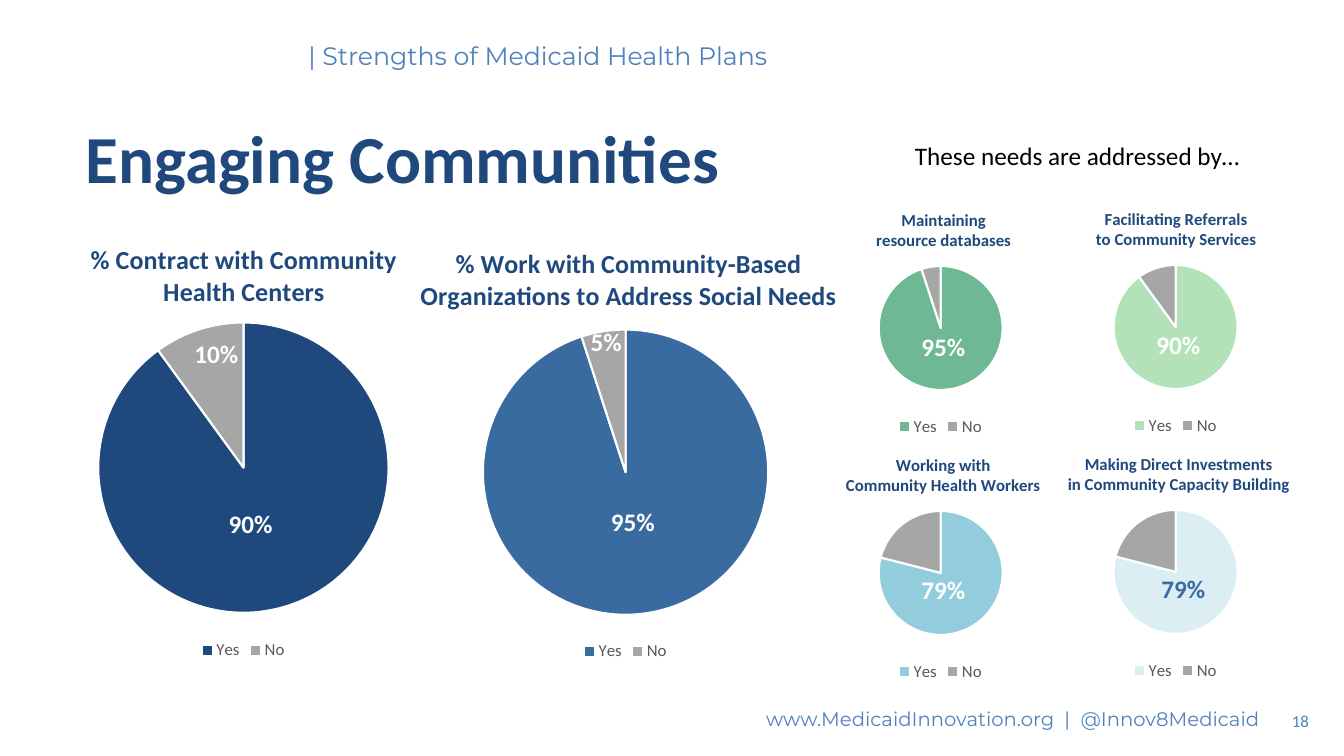
from dataclasses import dataclass

from pptx import Presentation, util as u
from pptx.chart.data import CategoryChartData
from pptx.dml.color import RGBColor
from pptx.enum import chart as ch, text as tx
from pptx.oxml import parse_xml
from pptx.oxml.ns import nsdecls, qn

NAVY, BLUE, SKY = "1F497D", "3A6BA0", "4F81BD"
GREY, WHITE, BLACK = "A6A6A6", "FFFFFF", "000000"


@dataclass
class Size:
    """Shared measures of a pie chart, in inches and points."""
    wide: float
    high: float
    font: float


@dataclass
class Pie:
    title: str
    yes: int
    fill: str
    left: float
    top: float
    size: Size
    head: tuple[float, float]  # title corner within the chart
    disc: tuple[float, float]  # disc top within the chart, diameter


@dataclass
class Label:
    words: str
    left: float
    top: float
    color: str = WHITE
    wide: float = 0.75


BIG = Size(5.67, 4.41, 18.6)
SMALL = Size(3.18, 2.47, 12)
DISC = (0.74, 1.23)
PIES = [
    Pie("% Contract with Community\nHealth Centers", 90, NAVY,
        -0.42, 2.18, BIG, (1.29, 0.19), (1.02, 2.88)),
    Pie("% Work with Community-Based\nOrganizations to Address Social Needs", 95, BLUE,
        3.37, 2.19, BIG, (0.77, 0.22), (1.08, 2.83)),
    Pie("Facilitating Referrals\nto Community Services", 90, "B4E2B8",
        10.07, 1.89, SMALL, (0.77, 0.14), DISC),
    Pie("Maintaining\nresource databases", 95, "6EB893",
        7.74, 1.9, SMALL, (0.92, 0.14), DISC),
    Pie("Making Direct Investments\nin Community Capacity Building", 79, "DBEEF4",
        10.07, 4.32, SMALL, (0.49, 0.14), DISC),
    Pie("Working with\nCommunity Health Workers", 79, "93CDDD",
        7.74, 4.33, SMALL, (0.62, 0.14), DISC),
]
LABELS = [
    Label("90%", 2.17, 4.99),
    Label("10%", 1.83, 3.31),
    Label("95%", 5.96, 4.97),
    Label("5%", 5.76, 3.19, wide=0.6),
    Label("95%", 9.04, 3.24),
    Label("90%", 11.37, 3.22),
    Label("79%", 9.04, 5.65),
    Label("79%", 11.42, 5.64, BLUE),
]


def rgb(color: str) -> RGBColor:
    return RGBColor.from_string(color)


def style(font, size: float, color: str, bold: bool = False,
          face: str = "Calibri") -> None:
    font.size, font.bold, font.name = u.Pt(size), bold, face
    font.color.rgb = rgb(color)


def write(slide, words: str, left: float, top: float, wide: float, high: float = 0.4, *,
          size: float = 18, color: str = WHITE, bold: bool = False,
          face: str = "Calibri", align=tx.PP_ALIGN.LEFT,
          anchor=tx.MSO_ANCHOR.TOP) -> None:
    box = slide.shapes.add_textbox(*map(u.Inches, (left, top, wide, high)))
    frame = box.text_frame
    frame.word_wrap, frame.vertical_anchor = True, anchor
    para = frame.paragraphs[0]
    para.alignment = align
    run = para.add_run()
    run.text = words
    style(run.font, size, color, bold, face)


def place(node, index: int, inner: bool = False, **share: float) -> None:
    """Give a chart part a fixed layout, as shares of the chart's size."""
    old = node.find(qn("c:layout"))
    if old is not None:
        node.remove(old)
    tags = '<c:layoutTarget val="inner"/>' if inner else ""
    tags += '<c:xMode val="edge"/><c:yMode val="edge"/>'
    tags += "".join(f'<c:{key} val="{val:.4f}"/>' for key, val in share.items())
    node.insert(index, parse_xml(
        f'<c:layout {nsdecls("c")}><c:manualLayout>{tags}</c:manualLayout></c:layout>'))


def draw(slide, pie: Pie) -> None:
    data = CategoryChartData()
    data.categories = ["Yes", "No"]
    data.add_series("Series 1", [pie.yes, 100 - pie.yes])
    wide, high = pie.size.wide, pie.size.high
    spot = map(u.Inches, (pie.left, pie.top, wide, high))
    chart = slide.shapes.add_chart(ch.XL_CHART_TYPE.PIE, *spot, data).chart
    style(chart.font, 10, BLACK)

    chart.has_title = True
    title = chart.chart_title
    title.text_frame.text = pie.title
    for para in title.text_frame.paragraphs:
        para.alignment = tx.PP_ALIGN.CENTER
        style(para.runs[0].font, pie.size.font, NAVY, True)
    left, top = pie.head
    place(title.element if hasattr(title, "element") else title._element, 1,
          x=left / wide, y=top / high)

    top, disc = pie.disc
    place(chart.element.find(".//" + qn("c:plotArea")), 0, True,
          x=(wide - disc) / 2 / wide, y=top / high, w=disc / wide, h=disc / high)

    chart.has_legend = True
    chart.legend.position = ch.XL_LEGEND_POSITION.BOTTOM
    chart.legend.include_in_layout = False
    style(chart.legend.font, 12, "595959")

    plot = chart.plots[0]
    plot.vary_by_categories = True
    for index, color in enumerate((pie.fill, GREY)):
        form = plot.series[0].points[index].format
        form.fill.solid()
        form.fill.fore_color.rgb = rgb(color)
        form.line.color.rgb = rgb(WHITE)
        form.line.width = u.Pt(1.5)


def main() -> None:
    deck = Presentation()
    deck.slide_width, deck.slide_height = u.Inches(13.33), u.Inches(7.5)
    slide = deck.slides.add_slide(deck.slide_layouts[6])

    write(slide, "Engaging Communities", 0.75, 0.93, 9.48, 1.25, size=48,
          color=NAVY, bold=True, anchor=tx.MSO_ANCHOR.MIDDLE)
    write(slide, "www.MedicaidInnovation.org  |  @Innov8Medicaid", 7.5, 6.96, 5.17,
          size=14, color=SKY, face="Montserrat")
    write(slide, "18", 9.97, 6.95, 3.11, size=12, color=SKY,
          align=tx.PP_ALIGN.RIGHT, anchor=tx.MSO_ANCHOR.MIDDLE)
    write(slide, "These needs are addressed by…", 8.78, 1.34, 3.81,
          color=BLACK, align=tx.PP_ALIGN.CENTER)
    write(slide, "| Strengths of Medicaid Health Plans", 2.96, 0.35, 6.12,
          color=SKY, face="Montserrat")
    for pie in PIES:
        draw(slide, pie)
    for label in LABELS:
        write(slide, label.words, label.left, label.top, label.wide,
              color=label.color, bold=True)
    deck.save("out.pptx")


if __name__ == "__main__":
    main()
